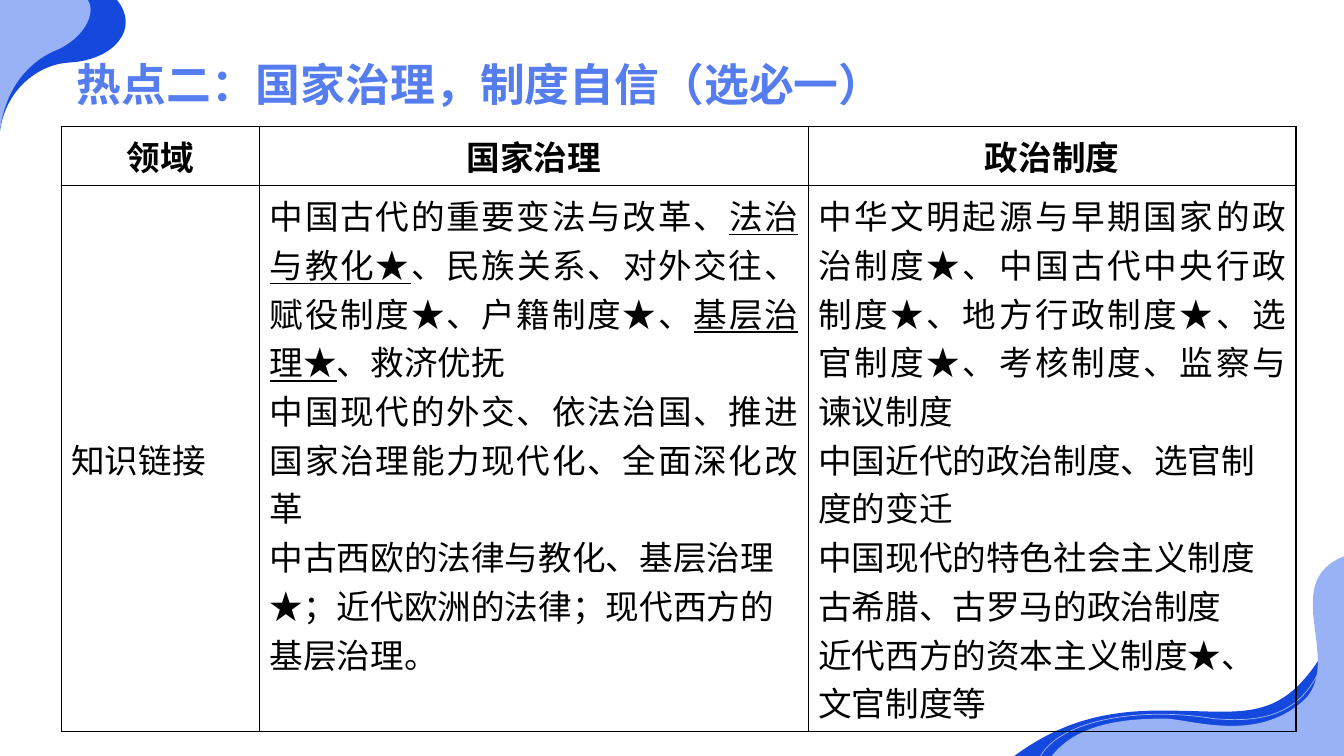
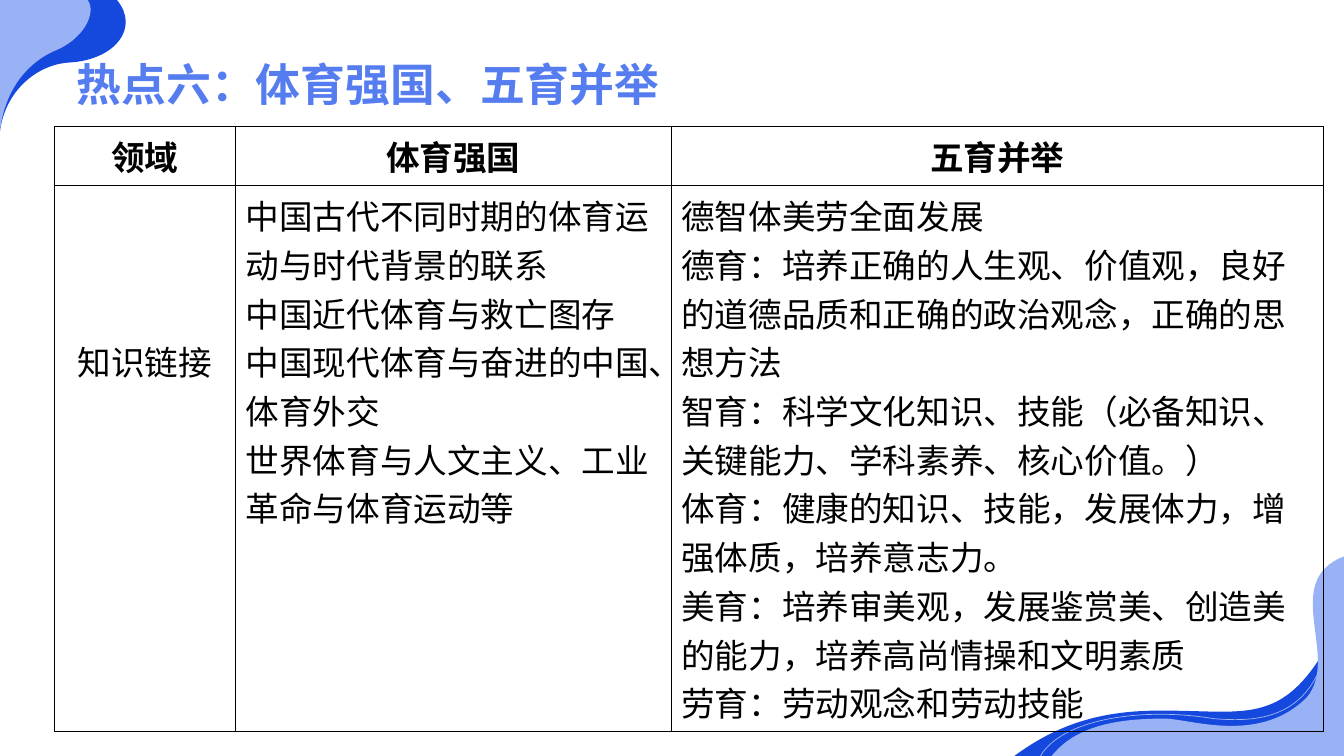
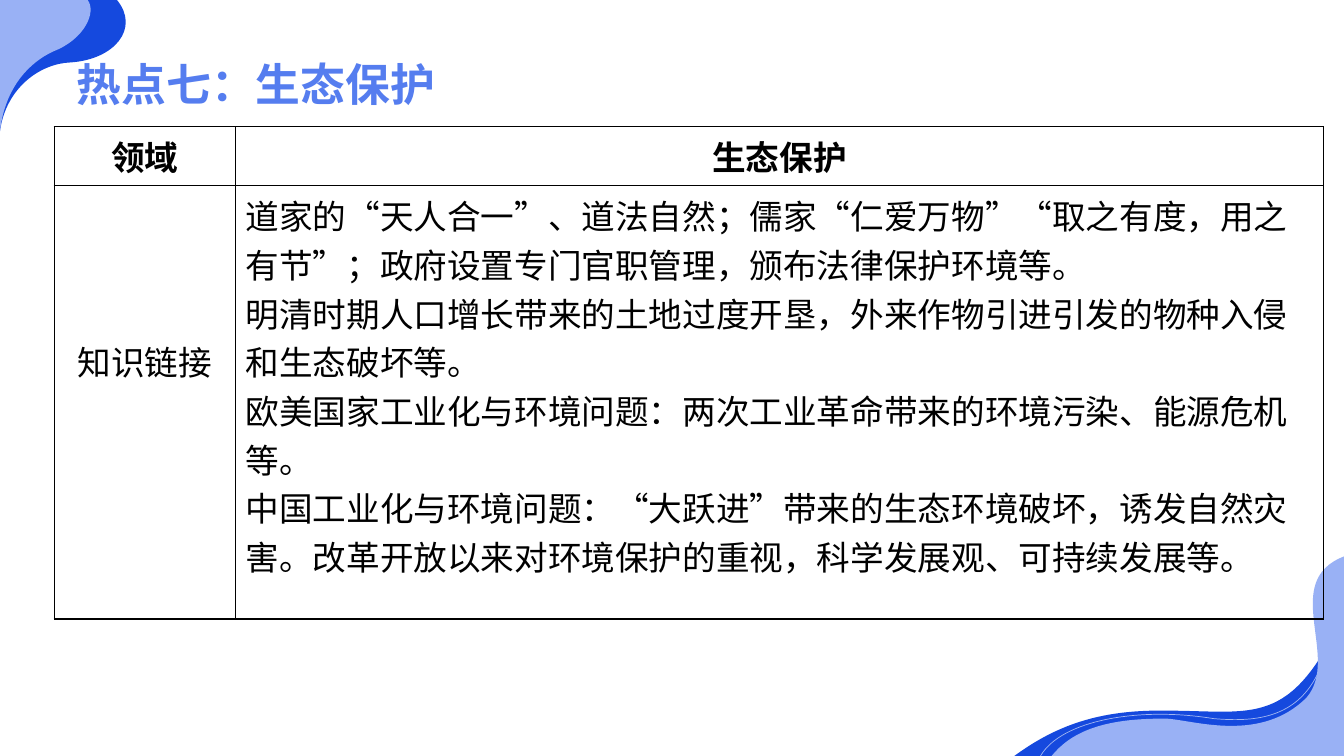
from dataclasses import dataclass

from lxml.etree import SubElement
from pptx import Presentation
from pptx.dml.color import RGBColor
from pptx.enum.lang import MSO_LANGUAGE_ID as Lang
from pptx.enum.text import MSO_ANCHOR as Anchor, MSO_AUTO_SIZE as AutoSize, PP_ALIGN as Align
from pptx.oxml import parse_xml
from pptx.oxml.ns import nsdecls, qn
from pptx.util import Inches, Pt

COLORS = {"title": "557DEF", "deep": "1549DE", "pale": "99B1F5", "text": "000000", "white": "FFFFFF"}
TITLE_FONT, TABLE_FONT = "Arial", "Noto Sans CJK SC"

# The slide is a grid of 100 columns by 100 rows
SLIDE_W, SLIDE_H = Inches(13.33), Inches(7.5)
TITLE_LEFT, TITLE_TOP, TITLE_ROWS = 5.7, 4.13, 10.53
TABLE_TOP, HEAD_ROWS, BODY_ROWS = 16.76, 5.73, 57.33
LINE_ROWS, CELL_PAD_ROWS = 6.44, 0.67


@dataclass
class Wave:
    """An outline in inches: a pair is a line, six numbers are a curve."""
    box: tuple  # left, top, width, height
    start: tuple
    segments: list
    fill: str = ""


@dataclass
class Para:
    """Text whose parts between bars are underlined."""
    text: str
    align: Align = Align.LEFT


@dataclass
class Topic:
    title: str
    title_cols: float
    left: float
    col_widths: list
    heads: list
    label: Para
    label_drop: int  # lines above the row label
    links: list


WAVES = [
    Wave((0, 0, 1.25, 1.3), (0, 0),
         [(1.16, 0), (1.39, 0.28, 1.14, 0.59, 0.7, 0.62),
          (0.4, 0.63, 0.06, 0.87, 0, 1.3), (0, 0)], "deep"),
    Wave((0, 0, 0.9, 1.3), (0, 0),
         [(0.87, 0), (0.96, 0.12, 0.84, 0.39, 0.53, 0.51),
          (0.29, 0.62, 0.05, 0.87, 0, 1.3), (0, 0)], "pale"),
    Wave((10.06, 6.09, 3.27, 1.41), (11.56, 7.05),
         [(12.45, 7.05, 12.79, 7.23, 13.33, 6.09), (13.33, 7.5), (10.06, 7.5),
          (10.47, 7.2, 10.9, 7.04, 11.56, 7.05)], "deep"),
    Wave((10.32, 6.64, 2.77, 0.86), (10.32, 7.5),
         [(10.53, 7.14, 11.31, 7.01, 12.04, 7.13),
          (12.41, 7.16, 12.87, 7.15, 13.09, 6.64)]),
    Wave((10.43, 5.52, 2.9, 1.98), (11.58, 7.13),
         [(11.86, 7.15, 12.51, 7.37, 12.96, 6.92),
          (13.3, 6.52, 12.69, 5.77, 13.33, 5.52), (13.33, 7.5), (10.43, 7.5),
          (10.61, 7.28, 10.91, 7.12, 11.58, 7.13)], "pale"),
]

TOPICS = [
    Topic(
        "热点二：国家治理，制度自信（选必一）", 64.22, 4.56, [14.76, 40.81, 36.31],
        ["领域", "国家治理", "政治制度"], Para("知识链接"), 5,
        [[Para("中国古代的重要变法与改革、|法治与教化★|、民族关系、对外交往、赋役制度★、"
               "户籍制度★、|基层治理★|、救济优抚", Align.JUSTIFY),
          Para("中国现代的外交、依法治国、推进国家治理能力现代化、全面深化改革", Align.JUSTIFY),
          Para("中古西欧的法律与教化、基层治理★；近代欧洲的法律；现代西方的基层治理。")],
         [Para("中华文明起源与早期国家的政治制度★、中国古代中央行政制度★、地方行政制度★、"
               "选官制度★、考核制度、监察与谏议制度", Align.JUSTIFY),
          Para("中国近代的政治制度、选官制度的变迁"),
          Para("中国现代的特色社会主义制度"),
          Para("古希腊、古罗马的政治制度"),
          Para("近代西方的资本主义制度★、文官制度等")]]),
    Topic(
        "热点六：体育强国、五育并举", 74.19, 4.03, [13.5, 32.41, 48.54],
        ["领域", "体育强国", "五育并举"], Para("知识链接", Align.CENTER), 3,
        [[Para("中国古代不同时期的体育运动与时代背景的联系"),
          Para("中国近代体育与救亡图存"),
          Para("中国现代体育与奋进的中国、体育外交"),
          Para("世界体育与人文主义、工业革命与体育运动等")],
         [Para("德智体美劳全面发展"),
          Para("德育：培养正确的人生观、价值观，良好的道德品质和正确的政治观念，正确的思想方法"),
          Para("智育：科学文化知识、技能（必备知识、关键能力、学科素养、核心价值。）"),
          Para("体育：健康的知识、技能，发展体力，增强体质，培养意志力。"),
          Para("美育：培养审美观，发展鉴赏美、创造美的能力，培养高尚情操和文明素质"),
          Para("劳育：劳动观念和劳动技能")]]),
    Topic(
        "热点七：生态保护", 74.19, 4.03, [13.5, 80.95],
        ["领域", "生态保护"], Para("知识链接", Align.CENTER), 3,
        [[Para("道家的“天人合一”、道法自然；儒家“仁爱万物”“取之有度，用之有节”；"
               "政府设置专门官职管理，颁布法律保护环境等。"),
          Para("明清时期人口增长带来的土地过度开垦，外来作物引进引发的物种入侵和生态破坏等。"),
          Para("欧美国家工业化与环境问题：两次工业革命带来的环境污染、能源危机等。"),
          Para("中国工业化与环境问题：“大跃进”带来的生态环境破坏，诱发自然灾害。"
               "改革开放以来对环境保护的重视，科学发展观、可持续发展等。")]]),
]


def cols(count: float) -> int:
    return round(SLIDE_W * count / 100)


def rows(count: float) -> int:
    return round(SLIDE_H * count / 100)


def rgb(key: str) -> RGBColor:
    return RGBColor.from_string(COLORS[key])


def write(frame, paras: list, *, size: float = 24, font: str = TABLE_FONT,
          color: str = "text", bold: bool = False) -> None:
    for index, para in enumerate(paras):
        line = frame.add_paragraph() if index else frame.paragraphs[0]
        line.alignment = para.align
        for part, words in enumerate(para.text.split("|")):
            run = line.add_run()
            run.text = words
            style = run.font
            style.size, style.bold, style.name = Pt(size), bold, font
            style.color.rgb = rgb(color)
            style.language_id = Lang.SIMPLIFIED_CHINESE
            if part % 2:
                style.underline = True
            # East Asian typeface
            SubElement(run._r.get_or_add_rPr(), qn("a:ea")).set("typeface", font)


def trace(outline, wave: Wave) -> None:
    """Write the wave's lines and curves into the path of a freeform."""
    left, top, width, height = wave.box
    for step in list(outline):
        outline.remove(step)
    outline.set("w", str(Inches(width)))
    outline.set("h", str(Inches(height)))
    kinds = ["moveTo"] + ["lnTo" if len(s) == 2 else "cubicBezTo" for s in wave.segments]
    for kind, numbers in zip(kinds, [wave.start, *wave.segments]):
        step = SubElement(outline, qn(f"a:{kind}"))
        for x, y in zip(numbers[::2], numbers[1::2]):
            point = SubElement(step, qn("a:pt"))
            point.set("x", str(Inches(x - left)))
            point.set("y", str(Inches(y - top)))
    if wave.fill:
        SubElement(outline, qn("a:close"))


def draw_wave(slide, wave: Wave):
    left, top, width, height = map(Inches, wave.box)
    builder = slide.shapes.build_freeform(left, top)
    builder.add_line_segments([(left + width, top + height)], close=False)
    shape = builder.convert_to_shape()
    trace(shape.element.find(".//" + qn("a:path")), wave)
    shape.shadow.inherit = False
    if wave.fill:
        shape.fill.solid()
        shape.fill.fore_color.rgb = rgb(wave.fill)
        shape.line.fill.background()
    else:
        shape.fill.background()
        shape.line.width = Pt(0.5)
        shape.line.color.rgb = rgb("white")
        # Translucent line
        tint = shape.element.find(".//" + qn("a:ln")).find(".//" + qn("a:srgbClr"))
        SubElement(tint, qn("a:alpha")).set("val", "60000")
    return shape


def decorate_layout(layout, slide) -> None:
    """Waves are built on a slide and moved behind the layout's placeholders."""
    for depth, wave in enumerate(WAVES, start=2):
        layout.shapes.element.insert(depth, draw_wave(slide, wave).element)


def format_cell(cell) -> None:
    cell.fill.background()
    properties = cell._tc.get_or_add_tcPr()
    for index, side in enumerate("LRTB"):
        properties.insert(index, parse_xml(
            f'<a:ln{side} {nsdecls("a")} w="12700"><a:solidFill>'
            f'<a:srgbClr val="{COLORS["text"]}"/></a:solidFill></a:ln{side}>'))


def add_title(slide, topic: Topic) -> None:
    title = slide.shapes.title
    title.left, title.top = cols(TITLE_LEFT), rows(TITLE_TOP)
    title.width, title.height = cols(topic.title_cols), rows(TITLE_ROWS)
    frame = title.text_frame
    frame.margin_left = frame.margin_right = frame.margin_top = frame.margin_bottom = 0
    frame.vertical_anchor, frame.auto_size = Anchor.BOTTOM, AutoSize.NONE
    write(frame, [Para(topic.title)], size=32, font=TITLE_FONT, color="title", bold=True)


def add_topic_table(slide, topic: Topic) -> None:
    table = slide.shapes.add_table(
        2, len(topic.heads), cols(topic.left), rows(TABLE_TOP),
        cols(sum(topic.col_widths)), rows(HEAD_ROWS + BODY_ROWS)).table
    table.first_row = table.horz_banding = False
    for column, width in zip(table.columns, topic.col_widths):
        column.width = cols(width)
    for row, height in zip(table.rows, (HEAD_ROWS, BODY_ROWS)):
        row.height = rows(height)
    for index, head in enumerate(topic.heads):
        write(table.cell(0, index).text_frame, [Para(head, Align.CENTER)], bold=True)
    for index, paras in enumerate([[topic.label], *topic.links]):
        write(table.cell(1, index).text_frame, paras)
    for cell in table.iter_cells():
        format_cell(cell)
    # The row label sits level with a line of the text beside it
    table.cell(1, 0).margin_top = rows(CELL_PAD_ROWS + topic.label_drop * LINE_ROWS)


def main() -> None:
    deck = Presentation()
    deck.slide_width, deck.slide_height = SLIDE_W, SLIDE_H
    layout = deck.slide_layouts.get_by_name("Title Only")
    for number, topic in enumerate(TOPICS):
        slide = deck.slides.add_slide(layout)
        if number == 0:
            decorate_layout(layout, slide)
        add_title(slide, topic)
        add_topic_table(slide, topic)
    deck.save("out.pptx")


if __name__ == "__main__":
    main()
